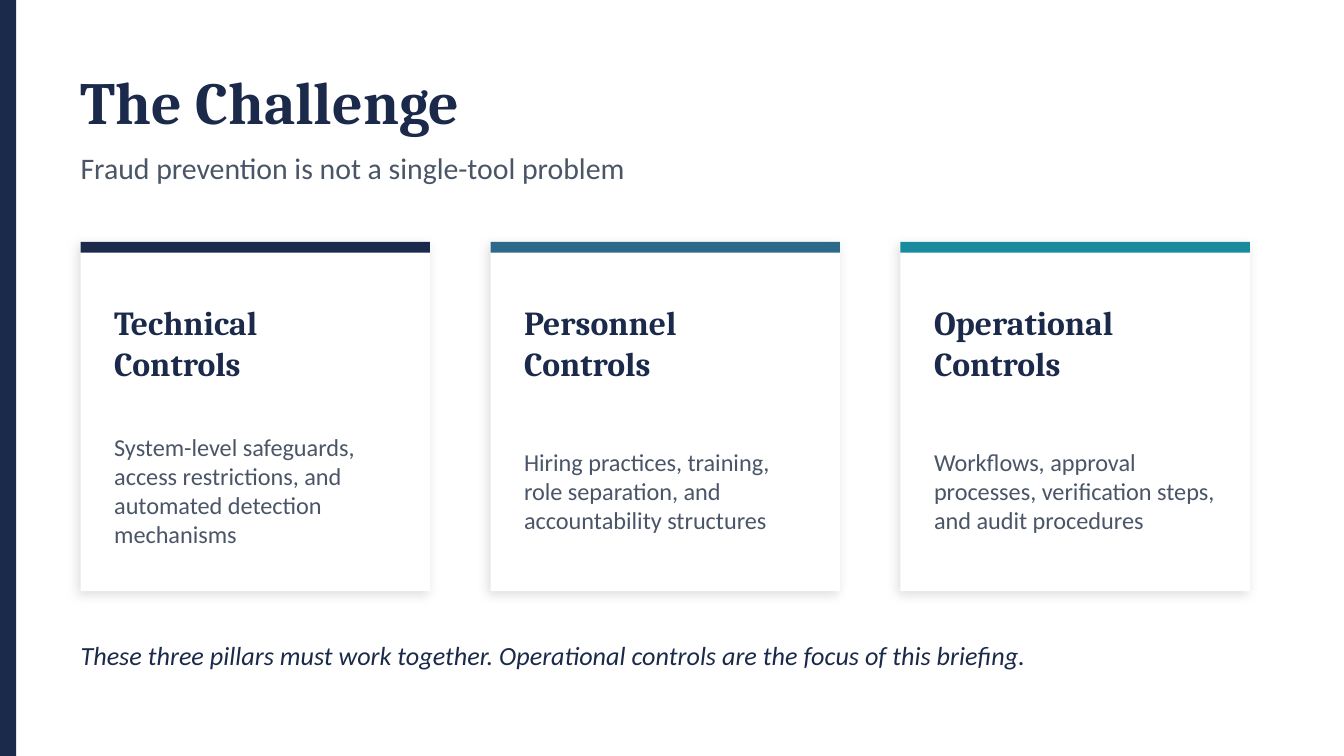
from collections import namedtuple
from dataclasses import dataclass

from lxml.etree import SubElement
from pptx import Presentation
from pptx.dml.color import RGBColor
from pptx.enum.shapes import MSO_SHAPE
from pptx.enum.text import MSO_ANCHOR
from pptx.oxml.ns import qn
from pptx.util import Emu, Pt

EMU_PER_PX = 4572  # 200 px to the inch

Box = namedtuple("Box", "left top width height")


@dataclass(frozen=True)
class Theme:
    navy: str = "1B2A4A"
    blue: str = "2D6A8A"
    teal: str = "1A8A9E"
    slate: str = "4A5568"
    white: str = "FFFFFF"
    shadow: str = "000000"
    heading_font: str = "Cambria"
    body_font: str = "Calibri"
    title_size: int = 32
    subtitle_size: int = 16
    card_title_size: int = 18
    card_body_size: int = 13
    closing_size: int = 14


THEME = Theme()

CARDS = [
    ("Technical\nControls", THEME.navy,
     "System-level safeguards, access restrictions, and automated detection mechanisms"),
    ("Personnel\nControls", THEME.blue,
     "Hiring practices, training, role separation, and accountability structures"),
    ("Operational\nControls", THEME.teal,
     "Workflows, approval processes, verification steps, and audit procedures"),
]


def px(value):
    return Emu(value * EMU_PER_PX)


def inside(box, left, top, width, height):
    """Turn a place relative to the box into a place on the slide."""
    return Box(box.left + left, box.top + top, width, height)


def add_rectangle(slide, box, color):
    shape = slide.shapes.add_shape(MSO_SHAPE.RECTANGLE, *map(px, box))
    shape.shadow.inherit = False
    shape.fill.solid()
    shape.fill.fore_color.rgb = RGBColor.from_string(color)
    shape.line.fill.background()
    return shape


def add_soft_shadow(shape):
    effects = shape._element.spPr.find(qn("a:effectLst"))
    shadow = SubElement(effects, qn("a:outerShdw"), blurRad=str(Pt(6)), dist=str(Pt(2)),
                        dir=str(135 * 60000), algn="bl", rotWithShape="0")
    color = SubElement(shadow, qn("a:srgbClr"), val=THEME.shadow)
    SubElement(color, qn("a:alpha"), val="12000")


def add_text(slide, box, text, *, size, font=THEME.body_font, color=THEME.slate,
             bold=False, italic=False):
    """Place text in the box, one paragraph for each line."""
    frame = slide.shapes.add_textbox(*map(px, box)).text_frame
    frame.word_wrap = True
    frame.vertical_anchor = MSO_ANCHOR.MIDDLE
    frame.margin_left = frame.margin_top = frame.margin_right = frame.margin_bottom = 0
    frame.text = text
    for paragraph in frame.paragraphs:
        for run in paragraph.runs:
            run.font.name = font
            run.font.size = Pt(size)
            run.font.bold = bold
            run.font.italic = italic
            run.font.color.rgb = RGBColor.from_string(color)


def add_header(slide, box):
    add_text(slide, inside(box, 0, 0, box.width, 140), "The Challenge",
             size=THEME.title_size, font=THEME.heading_font, color=THEME.navy, bold=True)
    add_text(slide, inside(box, 0, 130, box.width, 80),
             "Fraud prevention is not a single-tool problem", size=THEME.subtitle_size)


def add_card(slide, box, title, accent, description):
    padding = 50
    text_width = box.width - 2 * padding
    add_soft_shadow(add_rectangle(slide, box, THEME.white))
    add_rectangle(slide, inside(box, 0, 0, box.width, 16), accent)
    add_text(slide, inside(box, padding, 60, text_width, 180), title,
             size=THEME.card_title_size, font=THEME.heading_font, color=THEME.navy, bold=True)
    add_text(slide, inside(box, padding, 260, text_width, 220), description,
             size=THEME.card_body_size)


def add_card_row(slide, box, gap):
    card_width = (box.width - gap * (len(CARDS) - 1)) // len(CARDS)
    for index, card in enumerate(CARDS):
        left = index * (card_width + gap)
        add_card(slide, inside(box, left, 0, card_width, box.height), *card)


def add_closing_line(slide, box):
    add_text(slide, box,
             "These three pillars must work together. "
             "Operational controls are the focus of this briefing.",
             size=THEME.closing_size, color=THEME.navy, italic=True)


def main():
    presentation = Presentation()
    presentation.slide_width = px(2000)
    presentation.slide_height = px(1125)
    slide = presentation.slides.add_slide(presentation.slide_layouts[6])
    slide.background.fill.solid()
    slide.background.fill.fore_color.rgb = RGBColor.from_string(THEME.white)

    add_rectangle(slide, Box(0, 0, 24, 1125), THEME.navy)
    add_header(slide, Box(120, 80, 1800, 210))
    add_card_row(slide, Box(120, 360, 1740, 520), gap=90)
    add_closing_line(slide, Box(120, 930, 1760, 90))
    presentation.save("out.pptx")


if __name__ == "__main__":
    main()
